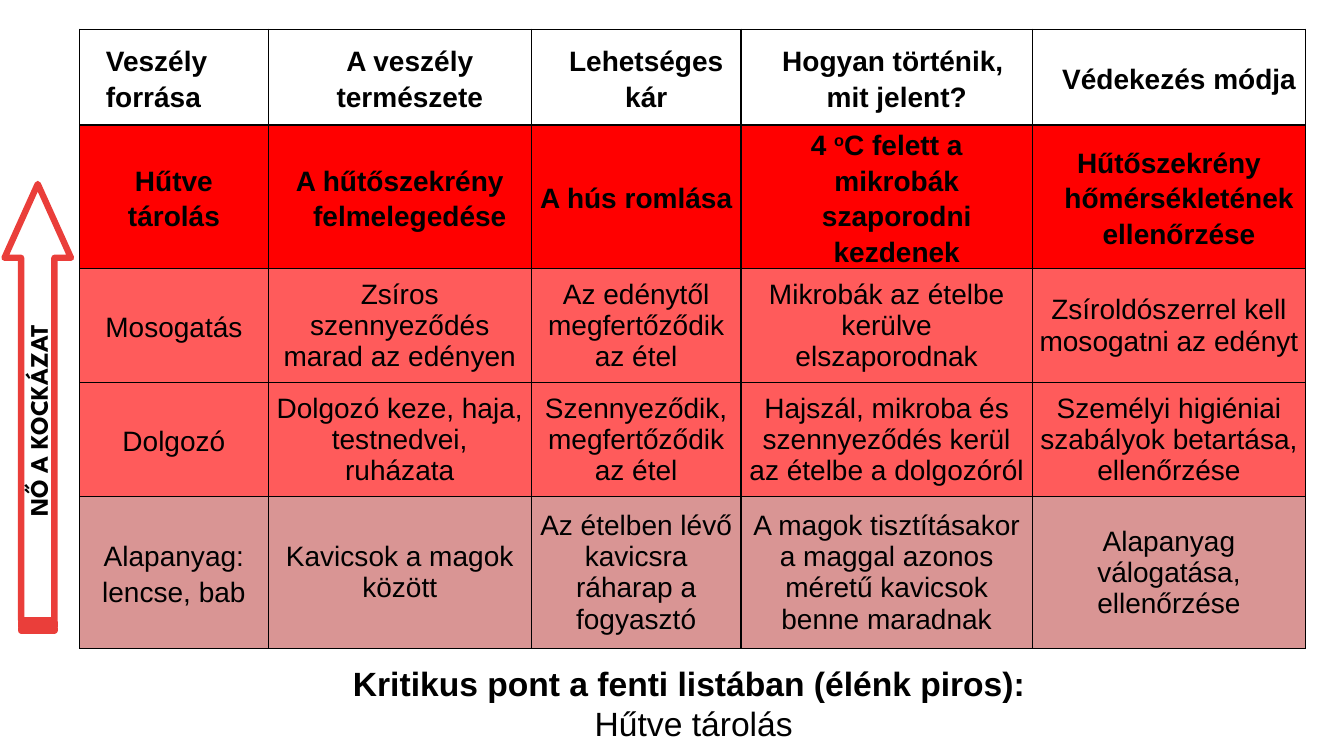
from lxml import etree
from pptx import Presentation
from pptx.dml.color import RGBColor
from pptx.enum import shapes, text
from pptx.oxml import ns
from pptx.util import Inches, Pt

BLACK = RGBColor(0x00, 0x00, 0x00)
CRITICAL_RED = RGBColor(0xFF, 0x00, 0x00)
MEDIUM_RED = RGBColor(0xFF, 0x5B, 0x5B)
PALE_RED = RGBColor(0xD9, 0x95, 0x94)
ARROW_RED = RGBColor(0xEA, 0x3E, 0x3A)

COLUMN_WIDTHS = [1.87, 2.61, 2.08, 2.89, 2.71]
ROW_HEIGHTS = [0.95, 1.28, 1.13, 1.13, 1.51]
ROW_FILLS = [None, CRITICAL_RED, MEDIUM_RED, MEDIUM_RED, PALE_RED]
HAZARDS = [
    ["Veszély forrása", "A veszély természete", "Lehetséges kár",
     "Hogyan történik, \nmit jelent?", "Védekezés módja"],
    ["Hűtve tárolás", "A hűtőszekrény felmelegedése", "A hús romlása",
     "4 ^o^C felett a mikrobák szaporodni kezdenek",
     "Hűtőszekrény hőmérsékletének ellenőrzése"],
    ["Mosogatás", "Zsíros szennyeződés marad az edényen",
     "Az edénytől megfertőződik az étel",
     "Mikrobák az ételbe kerülve elszaporodnak",
     "Zsíroldószerrel kell mosogatni az edényt"],
    ["Dolgozó", "Dolgozó keze, haja, testnedvei, ruházata",
     "Szennyeződik, megfertőződik az étel",
     "Hajszál, mikroba és szennyeződés kerül az ételbe a dolgozóról",
     "Személyi higiéniai szabályok betartása, ellenőrzése"],
    ["Alapanyag: lencse, bab", "Kavicsok a magok között",
     "Az ételben lévő kavicsra ráharap a fogyasztó",
     "A magok tisztításakor a maggal azonos méretű kavicsok benne maradnak",
     "Alapanyag válogatása, ellenőrzése"],
]


def add_span(para, words, size, bold, name="Arial"):
    span = para.add_run()
    span.text = words
    span.font.name = name
    span.font.size = Pt(size)
    span.font.bold = bold
    span.font.color.rgb = BLACK
    return span


def add_cell_text(para, words, bold):
    for line_number, line in enumerate(words.split("\n")):
        if line_number:
            para.add_line_break()
        for part_number, part in enumerate(line.split("^")):
            span = add_span(para, part, 20, bold)
            if part_number % 2:
                span.font._element.set("baseline", "30000")


def indent(para, margin, first_line):
    properties = para._p.get_or_add_pPr()
    properties.set("marL", str(Inches(margin)))
    properties.set("indent", str(Inches(first_line)))


def add_borders(cell):
    properties = cell._tc.get_or_add_tcPr()
    for position, side in enumerate(("lnL", "lnR", "lnT", "lnB")):
        line = etree.Element(ns.qn(f"a:{side}"), w=str(Pt(1)))
        fill = etree.SubElement(line, ns.qn("a:solidFill"))
        etree.SubElement(fill, ns.qn("a:srgbClr"), val=str(BLACK))
        properties.insert(position, line)


def fill_cell(cell, words, row, column):
    cell.margin_left = cell.margin_right = Inches(0.06)
    cell.margin_top = cell.margin_bottom = 0
    cell.vertical_anchor = text.MSO_ANCHOR.MIDDLE
    if ROW_FILLS[row] is None:
        cell.fill.background()
    else:
        cell.fill.solid()
        cell.fill.fore_color.rgb = ROW_FILLS[row]
    add_borders(cell)
    para = cell.text_frame.paragraphs[0]
    corner = row == 0 and column == 0
    para.alignment = text.PP_ALIGN.JUSTIFY if corner else text.PP_ALIGN.CENTER
    para.space_after = Pt(12)
    if row < 2 or column == 0:
        para.line_spacing = 1.15
    if row == 0:
        indent(para, 0.2, 0)
    elif row == 1 and column > 0:
        indent(para, 0.2, -0.2)
    add_cell_text(para, words, row < 2)


def add_hazard_table(page):
    frame = page.shapes.add_table(
        len(ROW_HEIGHTS), len(COLUMN_WIDTHS), Inches(0.79), Inches(0.29),
        Inches(sum(COLUMN_WIDTHS)), Inches(sum(ROW_HEIGHTS)))
    table = frame.table
    table.first_row = table.horz_banding = False
    for column, width in zip(table.columns, COLUMN_WIDTHS):
        column.width = Inches(width)
    for row, height in zip(table.rows, ROW_HEIGHTS):
        row.height = Inches(height)
    for row, entries in enumerate(HAZARDS):
        for column, words in enumerate(entries):
            fill_cell(table.cell(row, column), words, row, column)


def add_risk_arrow(page):
    arrow = page.shapes.add_shape(
        shapes.MSO_SHAPE.STRIPED_RIGHT_ARROW,
        Inches(-1.84), Inches(3.71), Inches(4.43), Inches(0.66))
    arrow.adjustments[0] = 0.5
    arrow.adjustments[1] = 1.11
    arrow.rotation = 270
    arrow.shadow.inherit = False
    arrow.fill.background()
    arrow.line.color.rgb = ARROW_RED
    arrow.line.width = Pt(4.5)
    arrow.text_frame.vertical_anchor = text.MSO_ANCHOR.MIDDLE
    para = arrow.text_frame.paragraphs[0]
    para.alignment = text.PP_ALIGN.CENTER
    add_span(para, "NŐ A KOCKÁZAT", 18, True, "League Spartan")


def add_conclusion(page):
    box = page.shapes.add_textbox(
        Inches(2.49), Inches(6.52), Inches(8.78), Inches(0.91))
    frame = box.text_frame
    frame.word_wrap = True
    frame.auto_size = text.MSO_AUTO_SIZE.SHAPE_TO_FIT_TEXT
    frame.vertical_anchor = text.MSO_ANCHOR.MIDDLE
    heading, answer = frame.paragraphs[0], frame.add_paragraph()
    heading.alignment = answer.alignment = text.PP_ALIGN.CENTER
    add_span(heading, "Kritikus pont a fenti listában (élénk piros): ", 24, True)
    add_span(answer, "Hűtve tárolás", 24, False)


def main():
    deck = Presentation()
    deck.slide_width = Inches(13.33)
    deck.slide_height = Inches(7.5)
    page = deck.slides.add_slide(deck.slide_layouts[6])
    add_hazard_table(page)
    add_risk_arrow(page)
    add_conclusion(page)
    deck.save("out.pptx")


if __name__ == "__main__":
    main()
